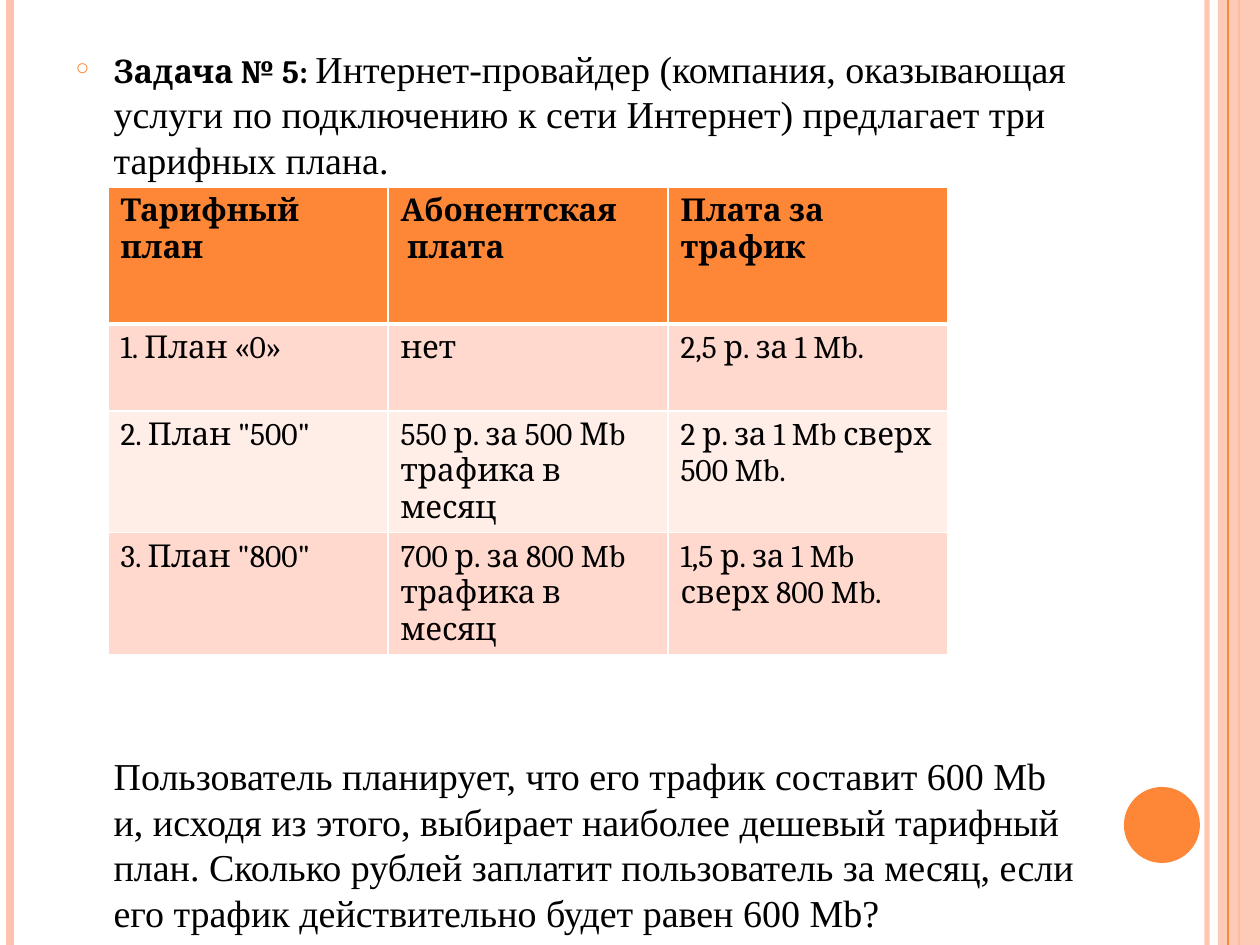
from lxml import etree
from pptx import Presentation, util as u
from pptx.dml import color
from pptx.enum import shapes, text
from pptx.oxml import ns, parse_xml

PX = 914400 / 126
ORANGE, PEACH, BLACK, WHITE = "FE8637", "FEC3AE", "000000", "FFFFFF"
BANDS = ["FFD9CE", "FFEDE8"]
TASK = [("Задача № 5: ", "Cambria", 18.6, True),
        ("Интернет-провайдер (компания, оказывающая услуги по подключению "
         "к сети Интернет) предлагает три тарифных плана.", "Times New Roman", 21.7, False)]
QUESTION = [("Пользователь планирует, что его трафик составит 600 Mb и, исходя из этого, "
             "выбирает наиболее дешевый тарифный план. Сколько рублей заплатит пользователь "
             "за месяц, если его трафик действительно будет равен 600 Mb?",
             "Times New Roman", 21.7, False)]
TARIFFS = [
    ["Тарифный план", "Абонентская\n плата", "Плата за трафик"],
    ["1. План «0»", "нет", "2,5 р. за 1 Mb."],
    ['2. План "500"', "550 р. за 500 Мb трафика в месяц", "2 р. за 1 Mb сверх 500 Mb."],
    ['3. План "800"', "700 р. за 800 Mb трафика в месяц", "1,5 р. за 1 Mb сверх 800 Mb."],
]


def px(*values):
    """Turn whole px into a list of EMU lengths."""
    return [u.Emu(round(v * PX)) for v in values]


def rgb(value):
    """Return the colour of a hex string."""
    return color.RGBColor.from_string(value)


def fade(fill, percent):
    """Give a solid fill an opacity."""
    clr = fill._xPr.find(".//" + ns.qn("a:srgbClr"))
    etree.SubElement(clr, ns.qn("a:alpha"), val=str(percent * 1000))


def style(r, font, size, bold):
    """Format one run of black text."""
    r.font.name, r.font.size, r.font.bold = font, u.Pt(size), bold
    r.font.color.rgb = rgb(BLACK)


def add_rule(s, x, top, height, hex_color, weight):
    """Draw one vertical rule and return it."""
    line = s.shapes.add_connector(shapes.MSO_CONNECTOR.STRAIGHT, *px(x, top, x, top + height))
    line.line.color.rgb, line.line.width = rgb(hex_color), u.Pt(weight)
    etree.SubElement(line._element.spPr, ns.qn("a:effectLst"))
    return line


def add_block(s, kind, box, hex_color):
    """Draw one plain filled shape and return it."""
    sp = s.shapes.add_shape(kind, *px(*box))
    sp.shadow.inherit = False
    sp.fill.solid()
    sp.fill.fore_color.rgb = rgb(hex_color)
    sp.line.fill.background()
    return sp


def add_frame(s, left, top, width, height):
    """Draw the side rules, the right band and the disc."""
    right = left + width
    fade(add_rule(s, right - 53, top, height, PEACH, 3).line.fill, 93)
    add_rule(s, left + 10, top, height, PEACH, 4.5)
    add_rule(s, right - 21, top, height, ORANGE, 1.5)
    band = add_block(s, shapes.MSO_SHAPE.RECTANGLE, (right - 42, top, 42, height), PEACH)
    fade(band.fill, 87)
    add_rule(s, right - 32, top, height, ORANGE, 0.75)
    add_block(s, shapes.MSO_SHAPE.OVAL, (right - 136, top + height - 158, 76, 76), ORANGE)


def set_bullet(p, shown):
    """Set the hanging indent and the ring bullet of a paragraph."""
    pPr = p._p.get_or_add_pPr()
    indent = px(38)[0]
    pPr.set("marL", str(indent))
    pPr.set("indent", str(-indent if shown else 0))
    if not shown:
        etree.SubElement(pPr, ns.qn("a:buNone"))
        return
    clr = etree.SubElement(pPr, ns.qn("a:buClr"))
    etree.SubElement(clr, ns.qn("a:srgbClr"), val=ORANGE)
    etree.SubElement(pPr, ns.qn("a:buSzPct"), val="70000")
    etree.SubElement(pPr, ns.qn("a:buChar"), char="○")


def fill_body(sp, left, top, width, height):
    """Place the task above the table and the question below it."""
    sp.left, sp.top, sp.width, sp.height = px(left, top, width, height)
    tf = sp.text_frame
    tf.word_wrap, tf.auto_size = True, text.MSO_AUTO_SIZE.NONE
    tf.vertical_anchor = text.MSO_ANCHOR.TOP
    for i, (runs, gap) in enumerate([(TASK, 0), (QUESTION, 326)]):
        p = tf.add_paragraph() if i else tf.paragraphs[0]
        set_bullet(p, i == 0)
        p.space_before, p.line_spacing = u.Pt(gap), 1.0
        for words, *look in runs:
            r = p.add_run()
            r.text = words
            style(r, *look)


def set_borders(cell, weights):
    """Give a cell white borders of the given weights by side."""
    tcPr = cell._tc.get_or_add_tcPr()
    for side, weight in weights.items():
        tcPr.append(parse_xml(
            f'<a:ln{side} {ns.nsdecls("a")} w="{u.Pt(weight)}"><a:solidFill>'
            f'<a:srgbClr val="{WHITE}"/></a:solidFill></a:ln{side}>'))


def add_tariffs(s, left, top, width, height):
    """Add the table of tariff plans."""
    rows, cols = len(TARIFFS), len(TARIFFS[0])
    header = 137
    table = s.shapes.add_table(rows, cols, *px(left, top, width, height)).table
    table.first_row = table.horz_banding = False
    for col in table.columns:
        col.width = px(width / cols)[0]
    for i, row in enumerate(TARIFFS):
        table.rows[i].height = px((height - header) / (rows - 1) if i else header)[0]
        for j, words in enumerate(row):
            cell = table.cell(i, j)
            cell.text = words
            set_borders(cell, {"L": 1, "R": 1, "T": 3 if i == 1 else 1, "B": 1 if i else 3})
            cell.fill.solid()
            cell.fill.fore_color.rgb = rgb(BANDS[(i - 1) % 2] if i else ORANGE)
            for p in cell.text_frame.paragraphs:
                style(p.runs[0], "Cambria", 18, i == 0)


def main():
    """Build and save the slide."""
    prs = Presentation()
    prs.slide_width, prs.slide_height = px(1260, 945)
    s = prs.slides.add_slide(prs.slide_layouts[1])
    title = s.shapes.title._element
    title.getparent().remove(title)
    add_frame(s, 0, 0, 1260, 945)
    fill_body(s.placeholders[1], 63, 39, 1029, 853)
    add_tariffs(s, 108, 187, 840, 398)
    prs.save("out.pptx")


if __name__ == "__main__":
    main()
